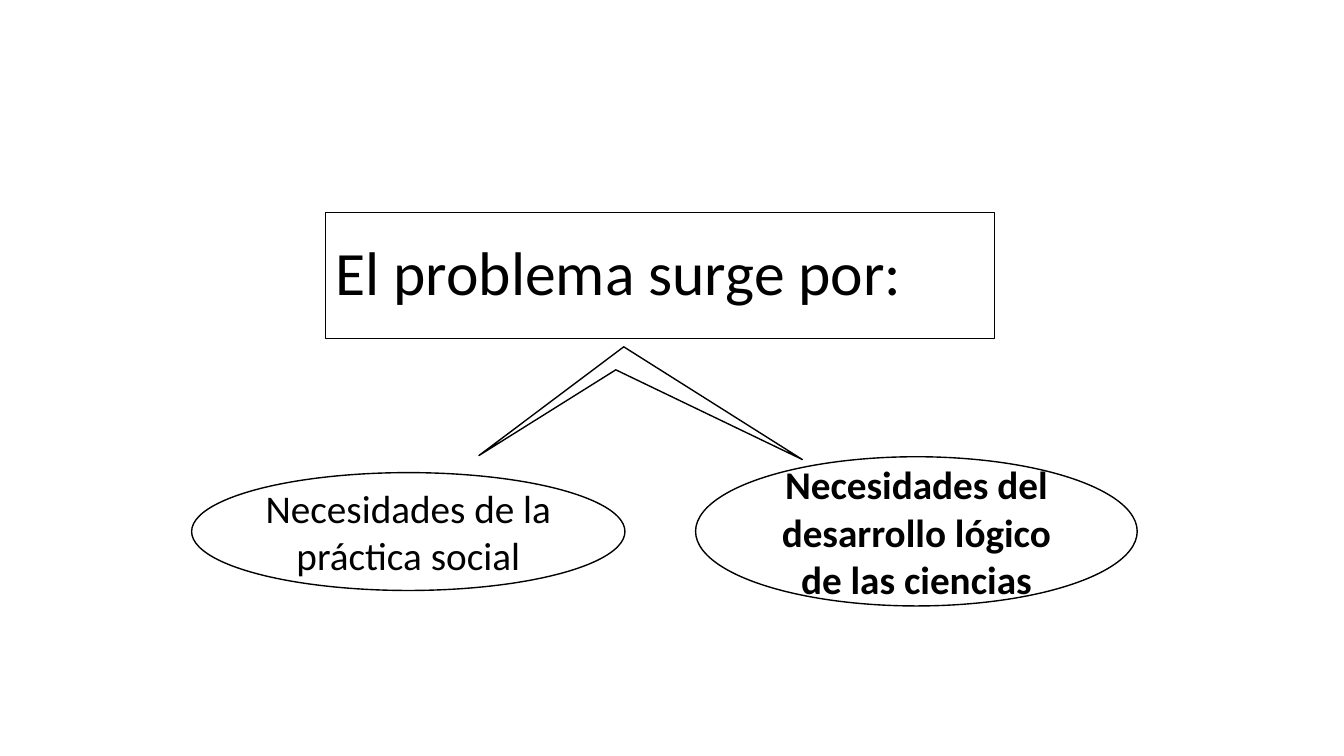
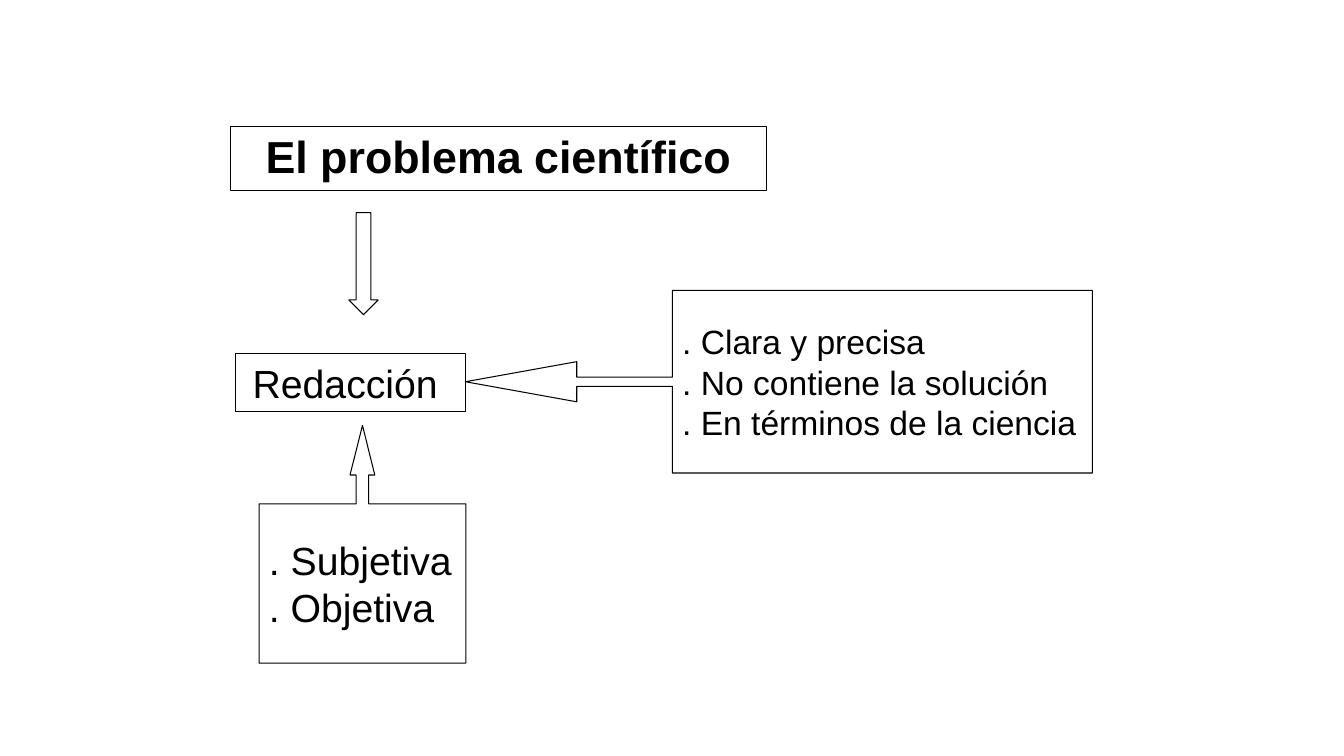
from pptx import Presentation
from pptx.dml.color import RGBColor
from pptx.enum import shapes, text
from pptx.util import Cm, Pt

KIND = shapes.MSO_SHAPE
ALIGN = text.PP_ALIGN
TITLE_ONLY = 5


def colour(value):
    return RGBColor.from_string(value)


class Deck:
    ink = "000000"
    paper = "FFFFFF"
    thin = 0.75

    def __init__(self):
        self.deck = Presentation()
        self.deck.slide_width = Cm(33.87)
        self.deck.slide_height = Cm(19.05)
        self.page = None

    def add_page(self, font):
        self.font = font
        self.page = self.deck.slides.add_slide(self.deck.slide_layouts[TITLE_ONLY])
        self.page.background.fill.solid()
        self.page.background.fill.fore_color.rgb = colour(self.paper)

    def outline(self, box, weight):
        box.fill.background()
        box.line.color.rgb = colour(self.ink)
        box.line.width = Pt(weight)

    def set_text(self, box, lines, size, bold, align, wrap=True, spacing=1.0):
        frame = box.text_frame
        frame.text = "\n".join(lines)
        frame.word_wrap = wrap
        frame.auto_size = text.MSO_AUTO_SIZE.NONE
        frame.vertical_anchor = text.MSO_ANCHOR.MIDDLE
        for para in frame.paragraphs:
            para.alignment = align
            para.line_spacing = spacing
            para.font.name = self.font
            para.font.size = Pt(size)
            para.font.bold = bold
            para.font.color.rgb = colour(self.ink)

    def title(self, wording, left, top, width, height, size,
              bold=False, align=ALIGN.CENTER):
        box = self.page.shapes.title
        box.left, box.top, box.width, box.height = map(Cm, (left, top, width, height))
        self.outline(box, self.thin)
        self.set_text(box, [wording], size, bold, align, spacing=0.9)

    def shape(self, kind, left, top, width, height, weight=thin, adjust=()):
        box = self.page.shapes.add_shape(kind, *map(Cm, (left, top, width, height)))
        box.shadow.inherit = False
        for index, value in enumerate(adjust):
            box.adjustments[index] = value
        self.outline(box, weight)
        return box

    def label(self, kind, wording, left, top, width, height, weight=thin, bold=False):
        box = self.shape(kind, left, top, width, height, weight)
        self.set_text(box, [wording], 28, bold, ALIGN.CENTER)

    def callout(self, kind, lines, left, top, width, height, size, adjust):
        box = self.shape(kind, left, top, width, height, adjust=adjust)
        self.set_text(box, lines, size, False, ALIGN.LEFT, wrap=False)

    def outline_shape(self, points, weight):
        start, *rest = [(Cm(x), Cm(y)) for x, y in points]
        builder = self.page.shapes.build_freeform(*start)
        builder.add_line_segments(rest, close=True)
        box = builder.convert_to_shape()
        box.shadow.inherit = False
        self.outline(box, weight)

    def save(self):
        self.deck.save("out.pptx")


def origin_page(deck):
    deck.add_page("Calibri")
    deck.title("El problema surge por:", 8.2, 5.36, 16.87, 3.18, 44, align=ALIGN.LEFT)
    deck.label(KIND.OVAL, "Necesidades de la práctica social",
               4.83, 11.91, 10.92, 2.97, weight=1)
    deck.label(KIND.OVAL, "Necesidades del desarrollo lógico de las ciencias",
               17.53, 11.51, 11.13, 3.76, weight=1, bold=True)
    deck.outline_shape([(15.72, 8.74), (12.07, 11.48), (15.52, 9.32), (20.22, 11.58)], 1)


def wording_page(deck):
    deck.add_page("Arial")
    deck.title("El problema científico", 5.82, 3.18, 13.49, 1.63, 32, bold=True)
    deck.label(KIND.RECTANGLE, "Redacción ", 5.94, 8.92, 5.79, 1.45)
    deck.callout(KIND.LEFT_ARROW_CALLOUT,
                 [". Clara y precisa", ". No contiene la solución",
                  ". En términos de la ciencia"],
                 11.73, 7.32, 15.8, 4.6, 24, (0.05, 0.11, 0.61, 0.67))
    deck.shape(KIND.DOWN_ARROW, 8.79, 5.36, 0.74, 2.57, adjust=(0.5, 0.5))
    deck.callout(KIND.UP_ARROW_CALLOUT, [". Subjetiva", ". Objetiva"],
                 6.53, 10.72, 5.21, 5.99, 28, (0.06, 0.06, 0.24, 0.67))


def main():
    deck = Deck()
    origin_page(deck)
    wording_page(deck)
    deck.save()


if __name__ == "__main__":
    main()
